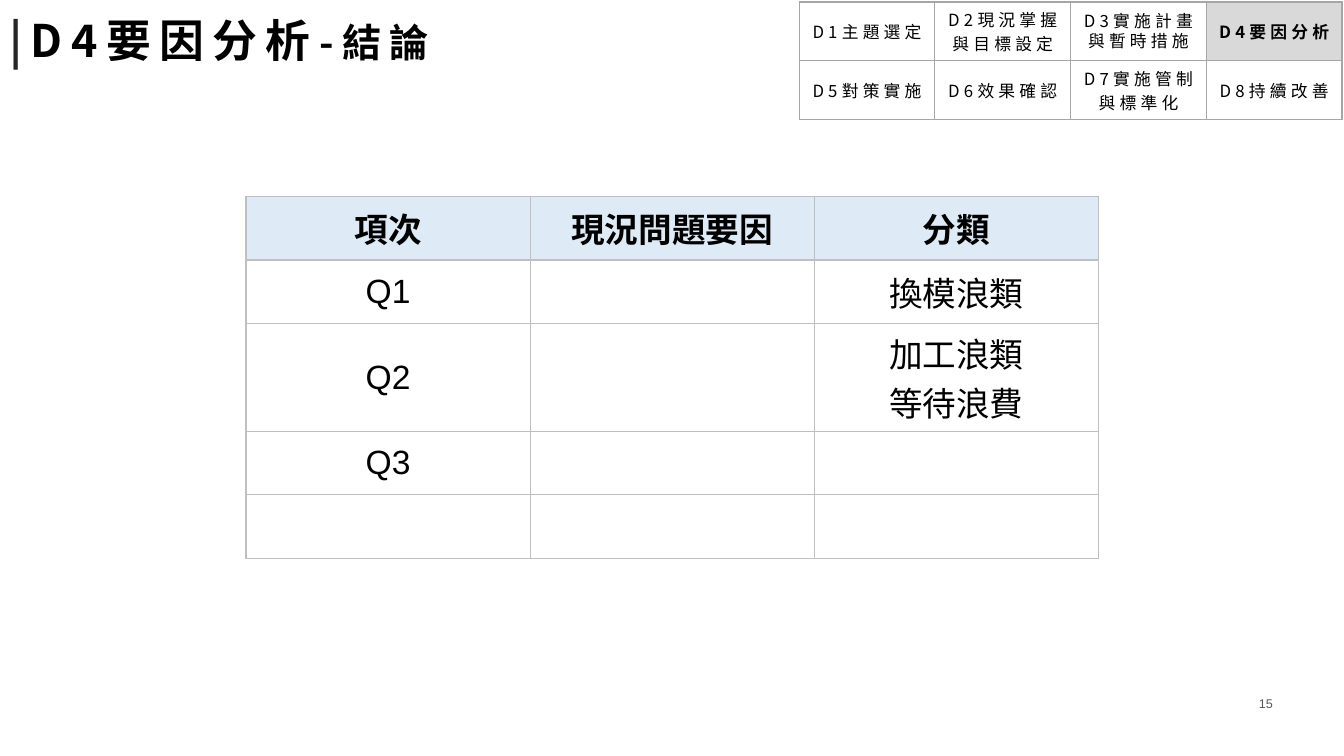
from pptx import Presentation
from pptx.dml.color import RGBColor
from pptx.enum.text import MSO_ANCHOR, PP_ALIGN
from pptx.oxml.ns import qn
from pptx.util import Cm, Pt
from lxml import etree

MIDDLE = MSO_ANCHOR.MIDDLE
TOP = MSO_ANCHOR.TOP
LEFT = PP_ALIGN.LEFT
CENTER = PP_ALIGN.CENTER
RIGHT = PP_ALIGN.RIGHT

COLORS = {
    "text": "000000",
    "bar": "262626",
    "number": "595959",
    "step_line": "A6A6A6",
    "current_step": "D9D9D9",
    "cause_line": "BFBFBF",
    "header": "DEEBF7",
}
CJK_FONT = "Noto Sans CJK SC"
LATIN_FONT = "Arial"

STEPS = [
    ["D1主題選定", "D2現況掌握\n與目標設定", "D3實施計畫\n與暫時措施", "D4要因分析"],
    ["D5對策實施", "D6效果確認", "D7實施管制\n與標準化", "D8持續改善"],
]
CURRENT_STEP = (0, 3)
TIGHT_STEP = (0, 2)

CAUSES = [
    ["項次", "現況問題要因", "分類"],
    ["Q1", "", "換模浪類"],
    ["Q2", "", "加工浪類\n等待浪費"],
    ["Q3", "", ""],
    ["", "", ""],
]


def format_span(span, size, font, color="text", bold=False, spacing=0):
    span.font.size = Pt(size)
    span.font.bold = bold
    span.font.name = font
    span.font.color.rgb = RGBColor.from_string(COLORS[color])
    properties = span.font._element
    etree.SubElement(properties, qn("a:ea"), typeface=CJK_FONT)
    if spacing:
        properties.set("spc", str(spacing * 100))


def add_text(page, left, top, width, height, spans, align, anchor, margins):
    box = page.shapes.add_textbox(Cm(left), Cm(top), Cm(width), Cm(height))
    frame = box.text_frame
    frame.word_wrap = True
    frame.vertical_anchor = anchor
    frame.margin_left = frame.margin_right = Cm(margins[0])
    frame.margin_top = frame.margin_bottom = Cm(margins[1])
    paragraph = frame.paragraphs[0]
    paragraph.alignment = align
    for text, style in spans:
        span = paragraph.add_run()
        span.text = text
        format_span(span, **style)


def set_borders(cell, color):
    properties = cell._tc.get_or_add_tcPr()
    for side in ("lnL", "lnR", "lnT", "lnB"):
        line = etree.SubElement(properties, qn(f"a:{side}"), w=str(Pt(1)))
        fill = etree.SubElement(line, qn("a:solidFill"))
        etree.SubElement(fill, qn("a:srgbClr"), val=COLORS[color])


def fill_cell(cell, text, line_color, fill_color, style):
    cell.vertical_anchor = MIDDLE
    cell.margin_left = cell.margin_right = Cm(0.1)
    set_borders(cell, line_color)
    if fill_color:
        cell.fill.solid()
        cell.fill.fore_color.rgb = RGBColor.from_string(COLORS[fill_color])
    else:
        cell.fill.background()
    cell.text_frame.text = text
    for paragraph in cell.text_frame.paragraphs:
        paragraph.alignment = CENTER
        for span in paragraph.runs:
            format_span(span, **style)


def add_grid(page, left, top, column_width, row_heights, column_count):
    frame = page.shapes.add_table(
        len(row_heights), column_count, Cm(left), Cm(top),
        Cm(column_width * column_count), Cm(sum(row_heights)))
    table = frame.table
    table.first_row = False
    table.horz_banding = False
    for column in table.columns:
        column.width = Cm(column_width)
    for row, height in zip(table.rows, row_heights):
        row.height = Cm(height)
    return table


def add_steps(page):
    table = add_grid(page, 20.14, 0.05, 3.42, [1.48] * len(STEPS), len(STEPS[0]))
    for row, texts in enumerate(STEPS):
        for column, text in enumerate(texts):
            current = (row, column) == CURRENT_STEP
            style = dict(size=12, font=CJK_FONT, bold=current, spacing=3)
            fill_cell(table.cell(row, column), text, "step_line",
                      "current_step" if current else None, style)
    for paragraph in table.cell(*TIGHT_STEP).text_frame.paragraphs:
        paragraph.line_spacing = 0.85


def add_causes(page):
    heights = [1.6, 1.6, 2.72, 1.6, 1.6]
    table = add_grid(page, 6.2, 4.95, 7.16, heights, len(CAUSES[0]))
    for row, texts in enumerate(CAUSES):
        header = row == 0
        style = dict(size=24, font=LATIN_FONT, bold=header)
        for column, text in enumerate(texts):
            fill_cell(table.cell(row, column), text, "cause_line",
                      "header" if header else None, style)


def main():
    deck = Presentation()
    deck.slide_width = Cm(33.87)
    deck.slide_height = Cm(19.05)
    page = deck.slides.add_slide(deck.slide_layouts[6])
    title = dict(size=32, font=CJK_FONT, bold=True, spacing=6)
    add_text(page, 31.93 - 1.4, 17.4, 1.8, 0.79,
             [("15", dict(size=9, font=LATIN_FONT, color="number"))],
             RIGHT, TOP, (0.25, 0.13))
    add_text(page, 0.05, 0.05, 20.09, 1.9,
             [("|", {**title, "color": "bar"}),
              ("D4要因分析", title),
              ("-結論", {**title, "size": 28})],
             LEFT, MIDDLE, (0.18, 0.1))
    add_steps(page)
    add_causes(page)
    deck.save("out.pptx")


if __name__ == "__main__":
    main()
